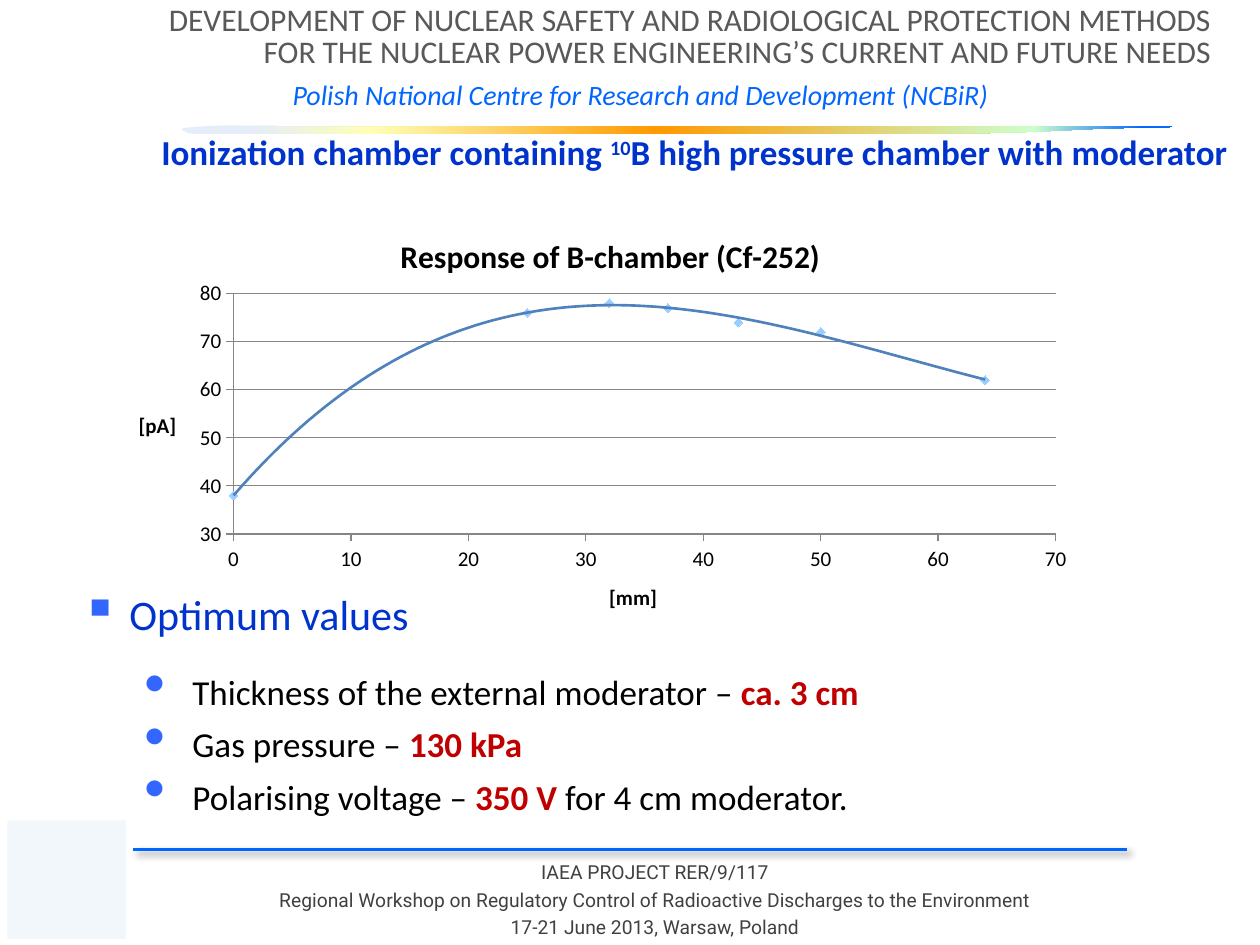
from lxml import etree
from pptx import Presentation
from pptx.chart.data import XyChartData
from pptx.dml.color import RGBColor
from pptx.enum.chart import XL_CHART_TYPE as ChartType, XL_MARKER_STYLE as Marker, XL_TICK_MARK as Tick
from pptx.enum.shapes import MSO_CONNECTOR as Conn, MSO_SHAPE as Shape
from pptx.enum.text import MSO_ANCHOR as Anchor, PP_ALIGN as Align
from pptx.oxml import parse_xml
from pptx.oxml.ns import qn
from pptx.util import Cm, Pt

NS = ('xmlns:a="http://schemas.openxmlformats.org/drawingml/2006/main" '
      'xmlns:c="http://schemas.openxmlformats.org/drawingml/2006/chart"')
BLUE, BRIGHT, RED, BLACK = "0033CC", "0066FF", "C00000", "000000"


def rgb(value):
    return RGBColor.from_string(value)


def set_font(font, color=None, **values):
    for name, value in values.items():
        setattr(font, name, value)
    if color:
        font.color.rgb = rgb(color)


def add_text(s, box, paras, anchor=Anchor.TOP, insets=(0.25, 0.13, 0.25, 0.13)):
    """paras: list of (paragraph format, font, [(text, font changes), ...])."""
    tf = s.shapes.add_textbox(*map(Cm, box)).text_frame
    tf.word_wrap, tf.vertical_anchor = True, anchor
    for side, inset in zip(("left", "top", "right", "bottom"), insets):
        setattr(tf, f"margin_{side}", Cm(inset))
    for i, (fmt, font, runs) in enumerate(paras):
        p = tf.paragraphs[0] if i == 0 else tf.add_paragraph()
        for name, value in fmt.items():
            setattr(p, name, value)
        for text, changes in runs:
            r = p.add_run()
            r.text = text
            set_font(r.font, **{**font, **changes})
    return tf


def bezier(p0, p1, p2, p3, steps=12):
    for t in (i / steps for i in range(1, steps + 1)):
        u = 1 - t
        yield tuple(Cm(u**3 * a + 3 * u * u * t * b + 3 * u * t * t * c + t**3 * d)
                    for a, b, c, d in zip(p0, p1, p2, p3))


def add_band(s, left, top):
    """Tapered colour band; each row is one Bezier segment in cm."""
    start = (19, 0.08)
    curves = [
        ((19.91, 0.05), (20.7, 0.05), (19.91, 0.05)),
        ((16.76, 0.03), (9.75, 0.03), (6.55, 0.05)),
        ((6.55, 0.05), (3.4, 0.05), (3.4, 0.05)),
        ((2.51, 0.05), (1.3, 0), (0.84, 0.03)),
        ((0, 0.08), (0.28, 0.1), (0.41, 0.18)),
        ((0.25, 0.2), (2.84, 0.2), (5.21, 0.18)),
        ((7.54, 0.18), (12.62, 0.2), (14.53, 0.2)),
        ((17.65, 0.18), (18.11, 0.1), start),
    ]
    builder = s.shapes.build_freeform(*map(Cm, start))
    here = start
    for curve in curves:
        builder.add_line_segments(list(bezier(here, *curve)), close=False)
        here = curve[-1]
    builder.add_line_segments([], close=True)
    sp = builder.convert_to_shape(Cm(left), Cm(top))
    sp.shadow.inherit = False
    sp.line.fill.background()
    # Five-colour gradient from left to right
    sp.fill.gradient()
    grad = sp._element.spPr.find(qn("a:gradFill"))
    stops = {7: "E4EDF8", 19: "FFFFB7", 48: "FF9900", 86: "CCFFCC", 97: BRIGHT}
    gs = "".join(f'<a:gs pos="{pos * 1000}"><a:srgbClr val="{color}"/></a:gs>'
                 for pos, color in stops.items())
    grad.getparent().replace(grad, parse_xml(
        f'<a:gradFill {NS} rotWithShape="1"><a:gsLst>{gs}</a:gsLst><a:lin ang="0" scaled="0"/></a:gradFill>'))


def add_header(s, left, top, width):
    font = dict(name="Calibri", size=Pt(18), color="595959")
    spacing = dict(line_spacing=Pt(18))
    tf = add_text(s, (left, top, width, 2.39), [
        (dict(spacing, alignment=Align.RIGHT, space_after=Pt(6)), font,
         [("DEVELOPMENT OF NUCLEAR SAFETY AND RADIOLOGICAL PROTECTION METHODS", {})]),
        (dict(spacing, space_after=Pt(12)), dict(font, size=Pt(16), color=BRIGHT, italic=True),
         [("Polish National Centre for Research and Development (NCBiR)", {})]),
    ], insets=(0, 0.13, 0.47, 0.13))
    # Second line of the project name
    p = tf.paragraphs[0]
    p.add_line_break()
    r = p.add_run()
    r.text = "FOR THE NUCLEAR POWER ENGINEERING’S CURRENT AND FUTURE NEEDS"
    set_font(r.font, **font)
    # Indent of the institution line
    tf.paragraphs[1]._p.get_or_add_pPr().set("marL", str(Cm(2.8)))
    add_band(s, left + 0.3, top + 2.51)


def add_title(s, box):
    bold = dict(name="Calibri", size=Pt(20), bold=True, color=BLUE)
    tf = add_text(s, box, [(dict(alignment=Align.CENTER), bold, [
        ("Ionization chamber containing ", {}), ("10", {}),
        ("B high pressure chamber with moderator", {})])])
    tf.paragraphs[0].runs[1].font._element.set("baseline", "30000")


def add_response_chart(s, box):
    data = XyChartData()
    series = data.add_series("Series 1")
    for x, y in zip((0, 25, 32, 37, 43, 50, 64), (38, 76, 78, 77, 74, 72, 62)):
        series.add_data_point(x, y)
    chart = s.shapes.add_chart(ChartType.XY_SCATTER, *map(Cm, box), data).chart
    chart.has_legend = False
    set_font(chart.font, name="Calibri", size=Pt(10), color=BLACK)

    def title(owner, text, size):
        owner.has_title = True
        tf = (owner.chart_title if owner is chart else owner.axis_title).text_frame
        tf.text = text
        set_font(tf.paragraphs[0].runs[0].font, name="Calibri", size=Pt(size), bold=True, color=BLACK)
        return tf

    title(chart, "Response of B-chamber (Cf-252)", 18)
    # Axes
    for axis, text, low, high in ((chart.category_axis, "[mm]", 0, 70), (chart.value_axis, "[pA]", 30, 80)):
        for name, value in dict(minimum_scale=low, maximum_scale=high, major_unit=10,
                                major_tick_mark=Tick.OUTSIDE, minor_tick_mark=Tick.NONE).items():
            setattr(axis, name, value)
        axis.has_major_gridlines = axis is chart.value_axis
        set_font(axis.tick_labels.font, name="Calibri", size=Pt(12), color=BLACK)
        axis.format.line.color.rgb = rgb("868686")
        title(axis, text, 12)._txBody.bodyPr.set("rot", "0")
    grid = chart.value_axis.major_gridlines.format.line
    grid.color.rgb, grid.width = rgb("868686"), Pt(0.75)
    # Points with a cubic trend line
    ser = chart.plots[0].series[0]
    ser.format.line.fill.background()
    ser.marker.style, ser.marker.size = Marker.DIAMOND, 5
    ser.marker.format.fill.solid()
    ser.marker.format.fill.fore_color.rgb = rgb("99CCFF")
    ser.marker.format.line.fill.background()
    ser._element.find(qn("c:xVal")).addprevious(parse_xml(
        f'<c:trendline {NS}><c:spPr><a:ln w="{Pt(1.5)}"><a:solidFill><a:srgbClr val="4F81BD"/>'
        '</a:solidFill></a:ln></c:spPr><c:trendlineType val="poly"/><c:order val="3"/>'
        '<c:dispRSqr val="0"/><c:dispEq val="0"/></c:trendline>'))
    # Inner plot area
    area = chart._chartSpace.find(".//" + qn("c:plotArea"))
    for old in area.findall(qn("c:layout")):
        area.remove(old)
    sizes = "".join(f'<c:{k} val="{v}"/>' for k, v in dict(x=0.12, y=0.195, w=0.829, h=0.591).items())
    area.insert(0, parse_xml(
        f'<c:layout {NS}><c:manualLayout><c:layoutTarget val="inner"/><c:xMode val="edge"/>'
        f'<c:yMode val="edge"/>{sizes}</c:manualLayout></c:layout>'))


def add_bullets(s, box):
    font = dict(name="Calibri", size=Pt(20), color=BLACK)
    strong = dict(color=RED, bold=True)
    items = [
        [("Thickness of the external moderator – ", {}), ("ca. 3 cm", strong)],
        [("Gas pressure – ", {}), ("130 kPa", strong)],
        [("Polarising voltage – ", {}), ("350 V ", strong), ("for 4 cm moderator.", {})],
    ]
    paras = [(dict(space_after=Pt(18)), dict(font, size=Pt(24), color=BLUE), [("Optimum values", {})])]
    paras += [(dict(level=1, space_after=Pt(6)), font, runs) for runs in items]
    tf = add_text(s, box, paras, Anchor.MIDDLE, (0.25, 0.51, 0.25, 0))
    for p in tf.paragraphs:
        indent, char, size = (2.54, "•", 175) if p.level else (1.27, "▪", 120)
        pPr = p._p.get_or_add_pPr()
        pPr.set("marL", str(Cm(indent)))
        pPr.set("indent", str(Cm(-0.97)))
        color = etree.SubElement(pPr, qn("a:buClr"))
        etree.SubElement(color, qn("a:srgbClr"), val="3366FF")
        etree.SubElement(pPr, qn("a:buSzPct"), val=str(size * 1000))
        etree.SubElement(pPr, qn("a:buChar"), char=char)


def add_footer(s, left, top):
    # Rule with a soft shadow
    y = Cm(top + 0.58)
    rule = s.shapes.add_connector(Conn.STRAIGHT, Cm(left + 2.54), y, Cm(left + 22.56), y)
    rule.line.color.rgb, rule.line.width = rgb(BRIGHT), Pt(1.5)
    rule._element.spPr.append(parse_xml(
        f'<a:effectLst {NS}><a:outerShdw blurRad="{Pt(4)}" dist="{Pt(3)}" dir="2700000">'
        '<a:srgbClr val="000000"><a:alpha val="40000"/></a:srgbClr></a:outerShdw></a:effectLst>'))
    # Plain corner block
    block = s.shapes.add_shape(Shape.RECTANGLE, Cm(left), Cm(top), Cm(2.39), Cm(2.39))
    block.shadow.inherit = False
    block.fill.solid()
    block.fill.fore_color.rgb = rgb("F2F7FC")
    block.line.fill.background()
    # Event details
    event = dict(name="Roboto", size=Pt(11), color="404040")
    lines = ("IAEA PROJECT RER/9/117",
             "Regional Workshop on Regulatory Control of Radioactive Discharges to the Environment",
             "17-21 June 2013, Warsaw, Poland")
    add_text(s, (left + 3.35, top + 0.68, 19.41, 1.7), [
        (dict(alignment=Align.CENTER, space_before=Pt(2.4 if i else 0)), event, [(text, {})])
        for i, text in enumerate(lines)])


def main():
    prs = Presentation()
    prs.slide_width, prs.slide_height = Cm(25.4), Cm(19.05)
    s = prs.slides.add_slide(prs.slide_layouts[6])
    add_footer(s, 0.15, 16.54)
    add_header(s, 3.1, 0, 21.79)
    add_bullets(s, (1.09, 11.33, 24.41, 5.16))
    add_title(s, (2.9, 2.51, 22.2, 1.8))
    add_response_chart(s, (2.31, 4.32, 19.99, 8.2))
    prs.save("out.pptx")


if __name__ == "__main__":
    main()
